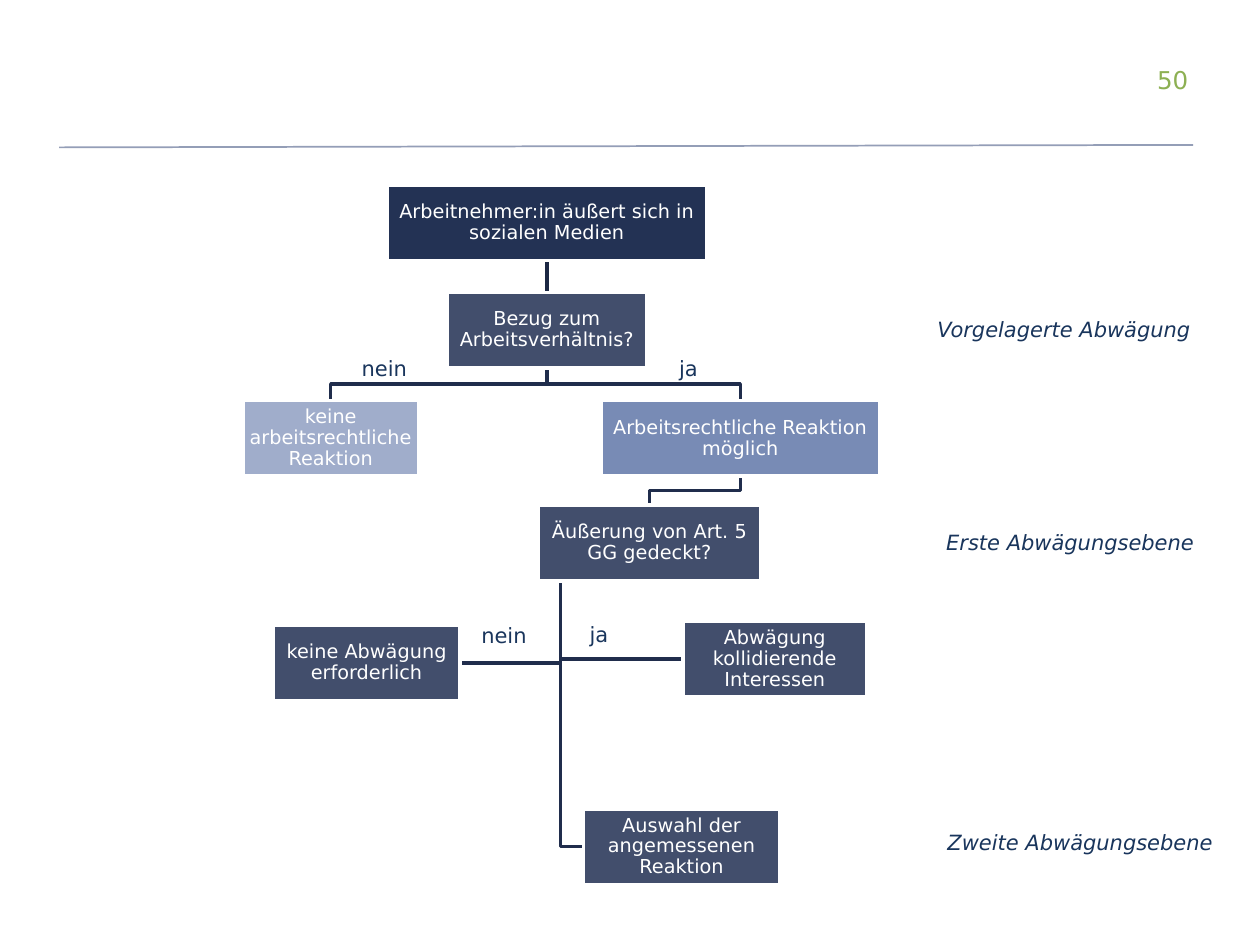
from dataclasses import dataclass

from lxml import etree
from pptx import Presentation
from pptx import util as u
from pptx.dml.color import RGBColor
from pptx.enum import shapes, text
from pptx.oxml.ns import qn

FONT = "DejaVu Sans"
WHITE, NAVY, BLUE = "FFFFFF", "233254", "788BB5"
INK, EDGE, STEM = "19355C", "202D4C", "1C2843"
HIGH = 0.6


@dataclass
class Box:
    words: str
    left: float
    top: float
    width: float
    fill: str = NAVY
    alpha: int = 86

    @property
    def mid(self) -> float:
        return self.left + self.width / 2

    @property
    def low(self) -> float:
        return self.top + HIGH


@dataclass
class Label:
    words: str
    left: float
    top: float
    width: float = 0.68
    italic: bool = False


START = Box("Arbeitnehmer:in äußert sich in sozialen Medien", 3.07, 1.47, 2.54, alpha=100)
LINK = Box("Bezug zum Arbeitsverhältnis?", 3.55, 2.32, 1.58)
NONE = Box("keine arbeitsrechtliche Reaktion", 1.93, 3.18, 1.39, BLUE, 70)
REACT = Box("Arbeitsrechtliche Reaktion möglich", 4.77, 3.18, 2.21, BLUE, 100)
COVER = Box("Äußerung von Art. 5 GG gedeckt?", 4.27, 4.01, 1.77)
SKIP = Box("keine Abwägung erforderlich", 2.17, 4.96, 1.48)
WEIGH = Box("Abwägung kollidierende Interessen", 5.42, 4.93, 1.46)
CHOICE = Box("Auswahl der angemessenen Reaktion", 4.63, 6.42, 1.56)
BOXES = [START, LINK, NONE, REACT, COVER, SKIP, WEIGH, CHOICE]

LABELS = [
    Label("nein", 2.87, 2.82),
    Label("ja", 5.39, 2.82),
    Label("Vorgelagerte Abwägung", 7.44, 2.51, 2.3, True),
    Label("Erste Abwägungsebene", 7.51, 4.2, 2.3, True),
    Label("Zweite Abwägungsebene", 7.52, 6.58, 2.3, True),
    Label("nein", 3.82, 4.94),
    Label("ja", 4.68, 4.93),
]


def color(code: str) -> RGBColor:
    return RGBColor.from_string(code)


def write(shape, words: str, *, size: int, ink: str, align=text.PP_ALIGN.LEFT,
          anchor=text.MSO_ANCHOR.TOP, side: float = 0, edge: float = 0,
          italic: bool = False, lead: float = 1.0) -> None:
    frame = shape.text_frame
    frame.word_wrap = True
    frame.vertical_anchor = anchor
    frame.margin_left = frame.margin_right = u.Inches(side)
    frame.margin_top = frame.margin_bottom = u.Inches(edge)
    para = frame.paragraphs[0]
    para.alignment = align
    para.line_spacing = lead
    run = para.add_run()
    run.text = words
    font = run.font
    font.name, font.size, font.italic = FONT, u.Pt(size), italic
    font.color.rgb = color(ink)


def add_text(slide, words: str, left: float, top: float, width: float,
             height: float, **form) -> None:
    area = slide.shapes.add_textbox(*map(u.Inches, (left, top, width, height)))
    write(area, words, **form)


def add_box(slide, box: Box):
    shape = slide.shapes.add_shape(
        shapes.MSO_SHAPE.RECTANGLE,
        *map(u.Inches, (box.left, box.top, box.width, HIGH)))
    shape.shadow.inherit = False
    shape.fill.solid()
    shape.fill.fore_color.rgb = color(box.fill)
    if box.alpha < 100:
        tint = shape.fill._xPr.find(qn("a:solidFill"))[0]
        etree.SubElement(tint, qn("a:alpha"), val=str(box.alpha * 1000))
    shape.line.color.rgb = color(WHITE)
    shape.line.width = u.Pt(2)
    write(shape, box.words, size=11, ink=WHITE, align=text.PP_ALIGN.CENTER,
          anchor=text.MSO_ANCHOR.MIDDLE, side=0.01, edge=0.01, lead=0.9)
    return shape


def add_line(slide, start: tuple, end: tuple, ink: str, width: float):
    line = slide.shapes.add_connector(
        shapes.MSO_CONNECTOR.STRAIGHT, *map(u.Inches, start + end))
    line.line.color.rgb = color(ink)
    line.line.width = u.Pt(width)
    etree.SubElement(line._element.spPr, qn("a:effectLst"))
    return line


def add_bend(slide, points: list[tuple[float, float]]) -> None:
    spots = [(u.Inches(x), u.Inches(y)) for x, y in points]
    pen = slide.shapes.build_freeform(*spots[0])
    pen.add_line_segments(spots[1:], close=False)
    bend = pen.convert_to_shape()
    bend.shadow.inherit = False
    bend.fill.background()
    bend.line.color.rgb = color(EDGE)
    bend.line.width = u.Pt(2)


def step(slide, above: Box, below: Box) -> None:
    """Runs from a bottom centre to a top centre, turning halfway."""
    turn = (above.low + below.top) / 2
    add_bend(slide, [(above.mid, above.low), (above.mid, turn),
                     (below.mid, turn), (below.mid, below.top)])


def hang(slide, above: Box, below: Box) -> None:
    """Runs down a trunk near the left edge, then to the near side."""
    trunk = above.left + 0.18
    side = below.left if below.left > trunk else below.left + below.width
    level = below.top + HIGH / 2
    add_bend(slide, [(trunk, above.low), (trunk, level), (side, level)])


def main() -> None:
    deck = Presentation()
    deck.slide_width, deck.slide_height = u.Inches(10), u.Inches(7.5)
    slide = deck.slides.add_slide(deck.slide_layouts[6])

    add_text(slide, "50", 7.17, 0.47, 2.36, 0.28, size=14, ink="8DB053",
             align=text.PP_ALIGN.RIGHT, anchor=text.MSO_ANCHOR.BOTTOM, side=0.1)
    add_line(slide, (0.47, 1.17), (9.47, 1.15), "949EB7", 1)

    for box in (CHOICE, WEIGH, SKIP):
        hang(slide, COVER, box)
    for above, below in ((REACT, COVER), (LINK, REACT), (LINK, NONE)):
        step(slide, above, below)
    stem = add_line(slide, (START.mid, START.low), (LINK.mid, LINK.top), STEM, 2)

    first, second, *_ = [add_box(slide, box) for box in BOXES]
    stem.begin_connect(first, 2)
    stem.end_connect(second, 0)

    for label in LABELS:
        add_text(slide, label.words, label.left, label.top, label.width, 0.29,
                 size=12, ink=INK, italic=label.italic)

    deck.save("out.pptx")


if __name__ == "__main__":
    main()
